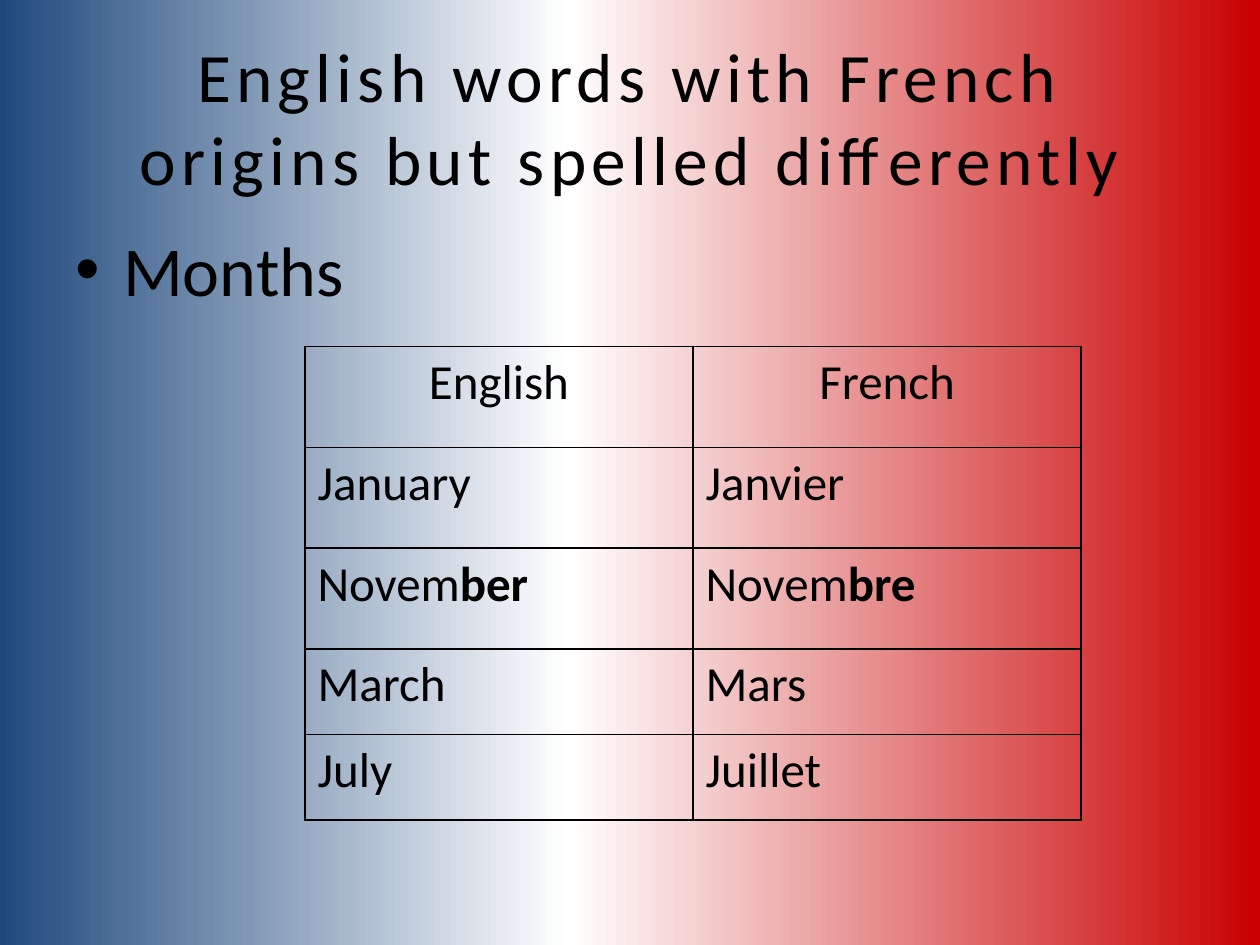
from copy import deepcopy
from dataclasses import dataclass

from lxml.etree import SubElement
from pptx import Presentation
from pptx.dml.color import RGBColor
from pptx.enum.text import MSO_ANCHOR, PP_ALIGN
from pptx.oxml.ns import qn
from pptx.util import Inches, Pt


@dataclass(frozen=True)
class Theme:
    font: str = "Calibri"
    ink: RGBColor = RGBColor(0, 0, 0)
    # Background stops: position and colour
    flag: tuple = ((0, "1F497D"), (0.45, "FFFFFF"), (1, "C80000"))
    title_size: float = 39.6
    title_spacing: float = 3
    body_size: float = 40
    table_size: float = 28
    border_width: float = 1


THEME = Theme()

# Each cell is a plain part and a bold ending
ROWS = [
    (("English", ""), ("French", "")),
    (("January", ""), ("Janvier", "")),
    (("Novem", "ber"), ("Novem", "bre")),
    (("March", ""), ("Mars", "")),
    (("July", ""), ("Juillet", "")),
]
ROW_HEIGHTS = (0.8, 0.8, 0.8, 0.68, 0.68)
COLUMN_WIDTH = 3.08


def style_span(span, size, bold=False):
    span.font.name = THEME.font
    span.font.size = Pt(size)
    span.font.bold = bold
    span.font.color.rgb = THEME.ink


def paint_background(page):
    fill = page.background.fill
    fill.gradient()
    fill.gradient_angle = 0
    stop_list = page.element.find(".//" + qn("a:gsLst"))
    stop_list.append(deepcopy(stop_list[-1]))
    for stop, (position, colour) in zip(fill.gradient_stops, THEME.flag):
        stop.position = position
        stop.color.rgb = RGBColor.from_string(colour)


def add_text(page, text, size, left, top, width, height):
    box = page.shapes.add_textbox(
        Inches(left), Inches(top), Inches(width), Inches(height))
    box.text_frame.word_wrap = True
    para = box.text_frame.paragraphs[0]
    para.text = text
    style_span(para.runs[0], size)
    return box


def add_title(page, text):
    box = add_text(page, text, THEME.title_size, 0.5, 0.3, 9, 1.25)
    box.text_frame.vertical_anchor = MSO_ANCHOR.MIDDLE
    para = box.text_frame.paragraphs[0]
    para.alignment = PP_ALIGN.CENTER
    letter_spacing = str(int(THEME.title_spacing * 100))
    para.runs[0].font._element.set("spc", letter_spacing)


def add_bullet(page, text):
    box = add_text(page, text, THEME.body_size, 0.5, 1.75, 9, 4.95)
    properties = box.text_frame.paragraphs[0]._p.get_or_add_pPr()
    indent = Inches(0.38)
    properties.set("marL", str(indent))
    properties.set("indent", str(-indent))
    space = SubElement(properties, qn("a:spcBef"))
    SubElement(space, qn("a:spcPct"), val="20000")
    SubElement(properties, qn("a:buFont"), typeface="Arial")
    SubElement(properties, qn("a:buChar"), char="•")


def add_borders(cell):
    properties = cell._tc.get_or_add_tcPr()
    width = str(Pt(THEME.border_width))
    for side in ("lnL", "lnR", "lnT", "lnB"):
        line = SubElement(properties, qn("a:" + side), w=width)
        solid = SubElement(line, qn("a:solidFill"))
        SubElement(solid, qn("a:srgbClr"), val=str(THEME.ink))


def fill_cell(cell, plain, ending, centred):
    para = cell.text_frame.paragraphs[0]
    para.text = plain
    style_span(para.runs[0], THEME.table_size)
    if ending:
        span = para.add_run()
        span.text = ending
        style_span(span, THEME.table_size, bold=True)
    para.alignment = PP_ALIGN.CENTER if centred else PP_ALIGN.LEFT
    # Borders must come before the fill in the cell properties
    add_borders(cell)
    cell.fill.background()


def add_month_table(page):
    columns = len(ROWS[0])
    frame = page.shapes.add_table(
        len(ROWS), columns, Inches(2.42), Inches(2.75),
        Inches(COLUMN_WIDTH * columns), Inches(sum(ROW_HEIGHTS)))
    table = frame.table
    table.first_row = False
    table.horz_banding = False
    for column in table.columns:
        column.width = Inches(COLUMN_WIDTH)
    for r, (words, height) in enumerate(zip(ROWS, ROW_HEIGHTS)):
        table.rows[r].height = Inches(height)
        for c, (plain, ending) in enumerate(words):
            fill_cell(table.cell(r, c), plain, ending, centred=r == 0)


def main():
    deck = Presentation()
    deck.slide_width = Inches(10)
    deck.slide_height = Inches(7.5)
    page = deck.slides.add_slide(deck.slide_layouts[6])

    paint_background(page)
    add_title(page, "English words with French origins but spelled differently")
    add_bullet(page, "Months")
    add_month_table(page)

    deck.save("out.pptx")


if __name__ == "__main__":
    main()
